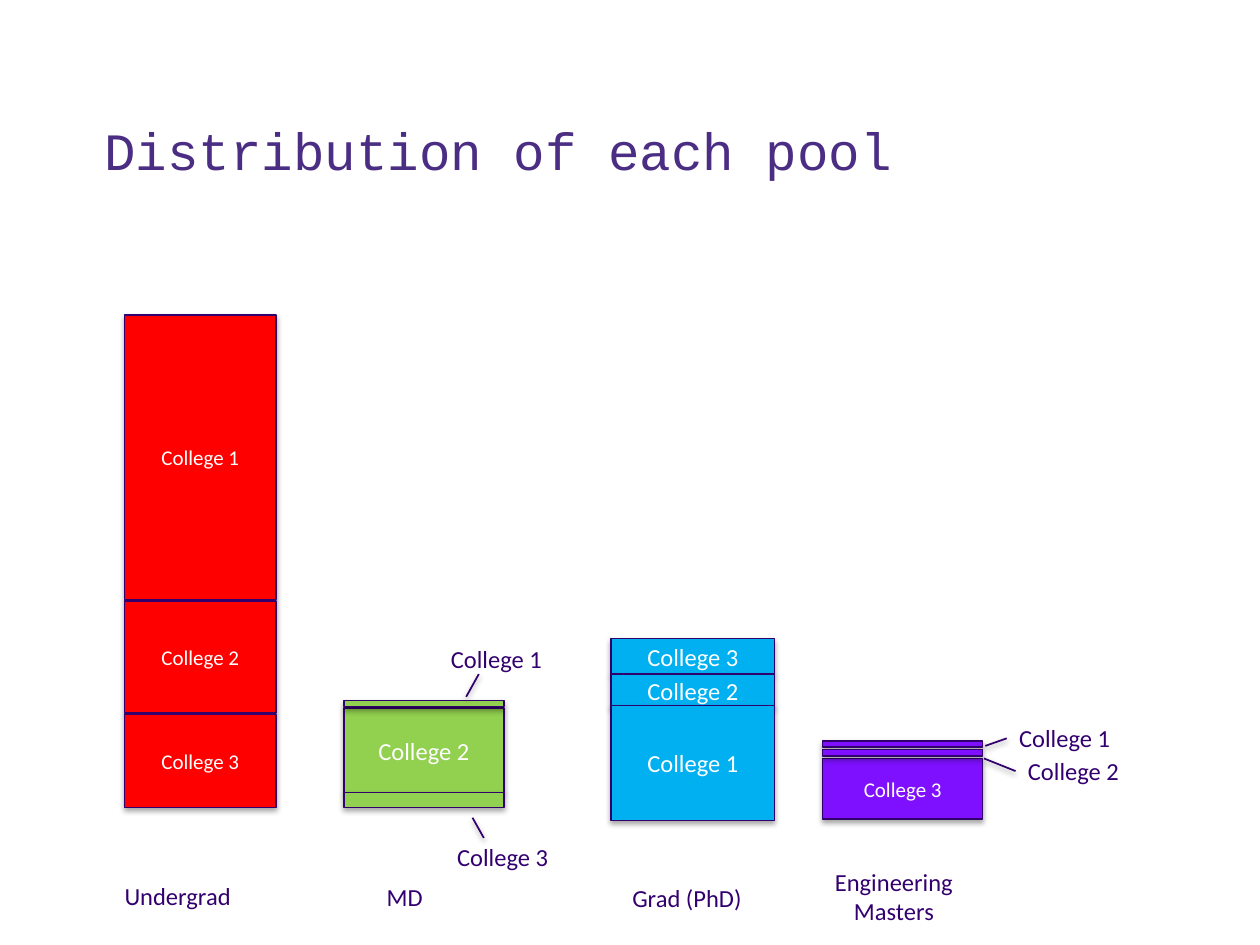
from lxml import etree
from pptx import Presentation
from pptx.dml.color import RGBColor
from pptx.enum.shapes import MSO_CONNECTOR, MSO_SHAPE
from pptx.enum.text import MSO_ANCHOR, PP_ALIGN
from pptx.oxml.ns import qn
from pptx.util import Inches, Pt

RECTANGLE = MSO_SHAPE.RECTANGLE
STRAIGHT = MSO_CONNECTOR.STRAIGHT
LEFT, CENTER = PP_ALIGN.LEFT, PP_ALIGN.CENTER
TOP, MIDDLE, BOTTOM = MSO_ANCHOR.TOP, MSO_ANCHOR.MIDDLE, MSO_ANCHOR.BOTTOM

THEME = {
    "title": {"name": "Courier New", "size": 30, "color": "4B2E83"},
    "label": {"name": "Calibri", "size": 14, "color": "33006F"},
    "bar": {"name": "Calibri", "size": 14, "color": "FFFFFF"},
    "small bar": {"name": "Calibri", "size": 12, "color": "FFFFFF"},
    "outline": ("32006D", 0.75),
    "leader": ("33006F", 1),
    "bar shadow": {"dist": 23000, "alpha": 35000},
    "leader shadow": {"dist": 20000, "alpha": 38000},
}

COLUMNS, ROWS = 100, 75
LABEL_HEIGHT = 3.4
TITLE = ("Distribution of each pool", 7.3, 1.7, 89.5, 13.2)

POOLS = [
    {"left": 48.5, "width": 13, "fill": "00B0F0", "segments": [
        ("College 3", 50.7, 2.8, "bar"),
        ("College 2", 53.5, 2.6, "bar"),
        ("College 1", 56, 9.1, "bar")]},
    {"left": 65.3, "width": 12.7, "fill": "7E10FF", "segments": [
        ("College 3", 60.2, 4.8, "small bar"),
        ("", 58.8, 0.5, "bar"),
        ("", 59.5, 0.5, "bar")]},
    {"left": 9.9, "width": 12, "fill": "FF0000", "segments": [
        ("College 1", 25, 22.6, "small bar"),
        ("College 2", 47.7, 8.9, "small bar"),
        ("College 3", 56.7, 7.4, "small bar")]},
    {"left": 27.3, "width": 12.7, "fill": "92D050", "segments": [
        ("College 2", 56.2, 6.7, "bar"),
        ("", 55.6, 0.5, "bar"),
        ("", 62.9, 1.2, "bar")]},
]

CALLOUTS = [
    ("College 1", 34.8, 50.6, (37, 55.3), (38, 53.5)),
    ("College 3", 35.3, 66.3, (37.5, 64.9), (38.4, 66.5)),
    ("College 1", 79.9, 56.9, (78.2, 59.2), (79.9, 58.6)),
    ("College 2", 80.6, 59.5, (78.1, 60.2), (80.6, 61.2)),
]
CALLOUT_WIDTH = 10.4

POOL_NAMES = [
    (["Undergrad"], 8.9, 69.4, LEFT),
    (["MD"], 29.7, 69.5, LEFT),
    (["Grad (PhD)"], 49.2, 69.6, LEFT),
    (["Engineering", "Masters"], 63.6, 68.3, CENTER),
]
NAME_WIDTH = 14.7

presentation = Presentation()
presentation.slide_width, presentation.slide_height = Inches(10), Inches(7.5)
slide = presentation.slides.add_slide(presentation.slide_layouts[6])


def place(column, row):
    return (round(presentation.slide_width * column / COLUMNS),
            round(presentation.slide_height * row / ROWS))


def write(shape, lines, style, alignment=LEFT, anchor=TOP):
    frame = shape.text_frame
    frame.word_wrap = True
    frame.vertical_anchor = anchor
    frame.text = "\n".join(lines)
    values = THEME[style]
    for paragraph in frame.paragraphs:
        paragraph.alignment = alignment
        font = paragraph.font
        for name, value in {"name": values["name"], "size": Pt(values["size"])}.items():
            setattr(font, name, value)
        font.color.rgb = RGBColor.from_string(values["color"])
    return frame


def set_line(shape, style):
    color, width = THEME[style]
    shape.line.color.rgb = RGBColor.from_string(color)
    shape.line.width = Pt(width)


def add_shadow(shape, style):
    values = THEME[style]
    effects = etree.SubElement(shape._element.spPr, qn("a:effectLst"))
    shadow = etree.SubElement(effects, qn("a:outerShdw"), blurRad="40000",
                              dist=str(values["dist"]), dir="5400000", rotWithShape="0")
    color = etree.SubElement(shadow, qn("a:srgbClr"), val="000000")
    etree.SubElement(color, qn("a:alpha"), val=str(values["alpha"]))


def add_text(lines, left, top, width, height, style, alignment=LEFT, anchor=TOP):
    box = slide.shapes.add_textbox(*place(left, top), *place(width, height))
    return write(box, lines, style, alignment, anchor)


def add_segment(pool, text, top, height, style):
    shape = slide.shapes.add_shape(RECTANGLE, *place(pool["left"], top),
                                   *place(pool["width"], height))
    shape.fill.solid()
    shape.fill.fore_color.rgb = RGBColor.from_string(pool["fill"])
    set_line(shape, "outline")
    add_shadow(shape, "bar shadow")
    if text:
        write(shape, [text], style, CENTER, MIDDLE)


def add_leader(start, end):
    connector = slide.shapes.add_connector(STRAIGHT, *place(*start), *place(*end))
    set_line(connector, "leader")
    add_shadow(connector, "leader shadow")


title_text, *title_area = TITLE
title_frame = add_text([title_text], *title_area, "title", anchor=BOTTOM)
title_frame.paragraphs[0].line_spacing = 0.9

for pool in POOLS:
    for segment in pool["segments"]:
        add_segment(pool, *segment)

for text, left, top, start, end in CALLOUTS:
    add_text([text], left, top, CALLOUT_WIDTH, LABEL_HEIGHT, "label")
    add_leader(start, end)

for lines, left, top, alignment in POOL_NAMES:
    height = LABEL_HEIGHT + 2.3 * (len(lines) - 1)
    add_text(lines, left, top, NAME_WIDTH, height, "label", alignment)

presentation.save("out.pptx")
